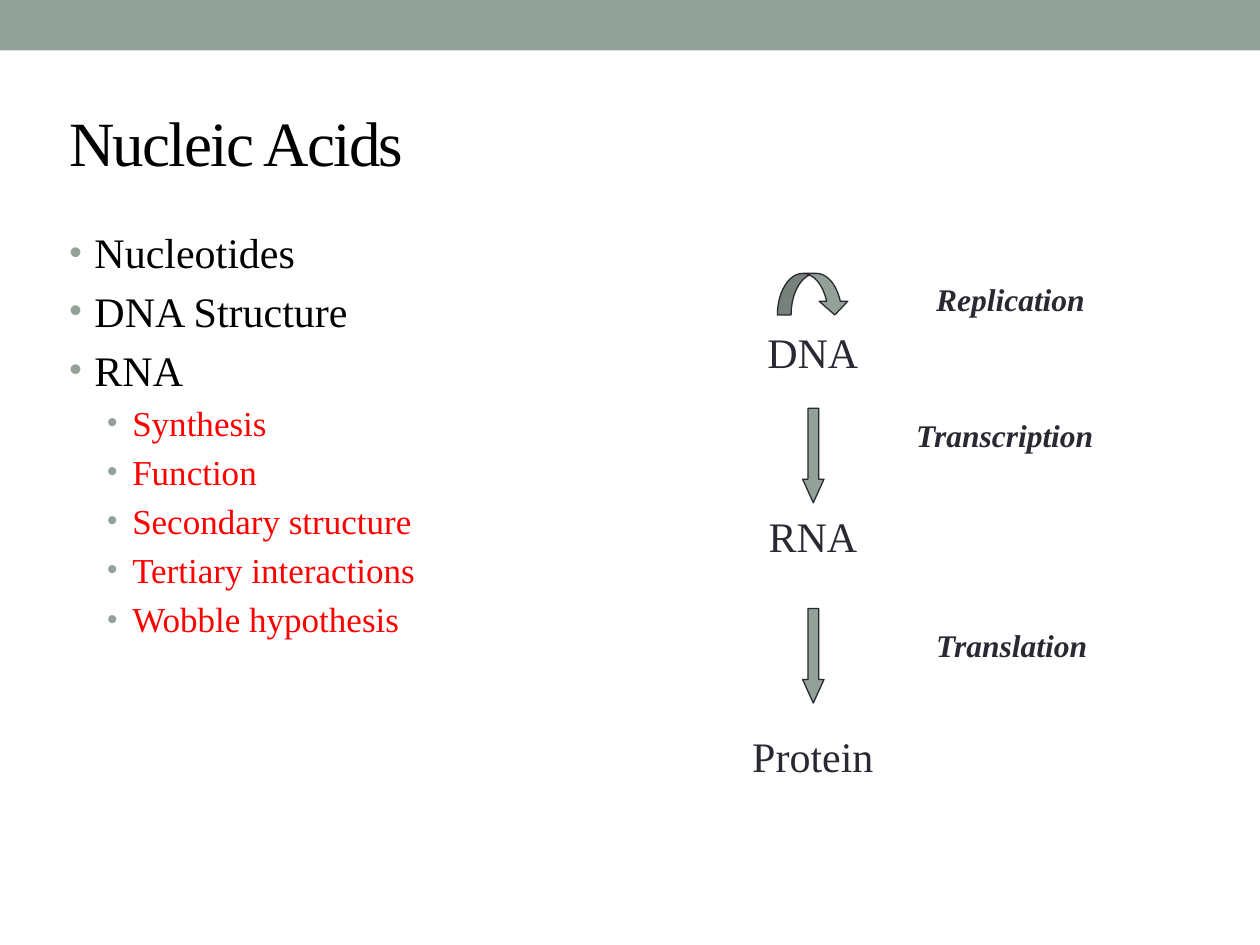
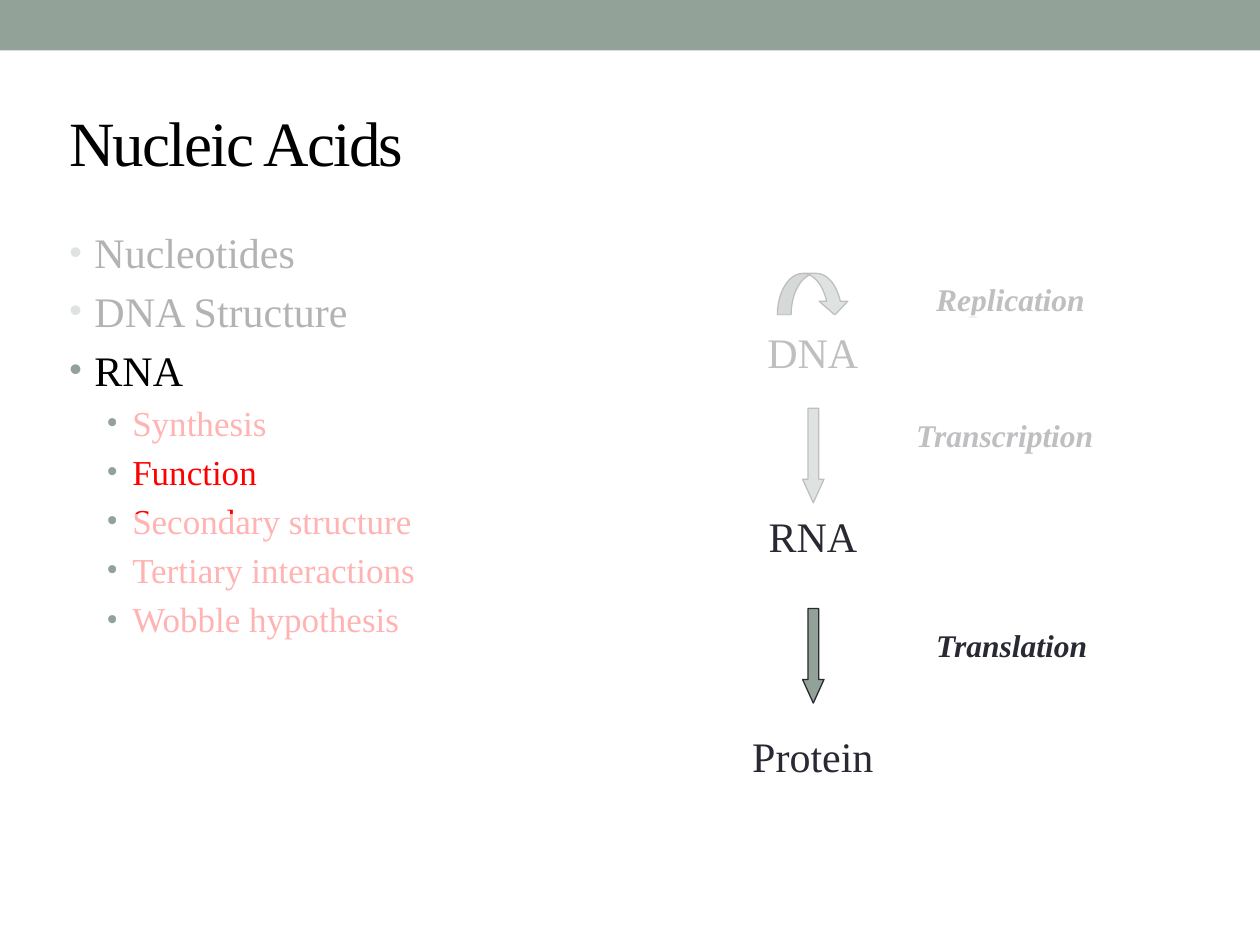
from lxml import etree
from pptx import Presentation
from pptx.dml.color import RGBColor
from pptx.enum.shapes import MSO_SHAPE
from pptx.enum.text import MSO_ANCHOR, MSO_AUTO_SIZE
from pptx.oxml.ns import qn
from pptx.util import Inches, Pt

RECTANGLE = MSO_SHAPE.RECTANGLE
DOWN_ARROW = MSO_SHAPE.DOWN_ARROW
CURVED_ARROW = MSO_SHAPE.CURVED_DOWN_ARROW
MIDDLE = MSO_ANCHOR.MIDDLE
TOP = MSO_ANCHOR.TOP
FIT_TEXT = MSO_AUTO_SIZE.SHAPE_TO_FIT_TEXT

FONT = "Times New Roman"
SAGE = "93A299"
INK = "292934"
BLACK = "000000"
RED = "FF0000"
WHITE = "FFFFFF"
INSET = 0.05

TOPICS = [
    ("Nucleotides", 0),
    ("DNA Structure", 0),
    ("RNA", 0),
    ("Synthesis", 1),
    ("Function", 1),
    ("Secondary structure", 1),
    ("Tertiary interactions", 1),
    ("Wobble hypothesis", 1),
]
LEVELS = [(0.2, 24, BLACK), (0.5, 20, RED)]
MOLECULES = [
    ("DNA", 6.04, 2.54, 0.84),
    ("RNA", 6.05, 4, 0.82),
    ("Protein", 5.92, 5.75, 1.08),
]
PROCESSES = [
    ("Replication", 7.38, 2.17, 1.29),
    ("Transcription", 7.22, 3.25, 1.52),
    ("Translation", 7.38, 4.92, 1.31),
]
VEILS = [
    (0.5, 1.42, 3.75, 1.33),
    (0.92, 4.08, 3.92, 2.33),
    (5.75, 1.92, 3.17, 0.67),
    (5.58, 2.5, 3.5, 1.58),
    (0.92, 3.08, 3.58, 0.58),
]


def color(hex_string):
    return RGBColor.from_string(hex_string)


def add_child(parent, tag, **attributes):
    return etree.SubElement(parent, qn(tag), attributes)


def style_font(paragraph, size, hex_string, emphasis=False):
    font = paragraph.font
    font.name = FONT
    font.size = Pt(size)
    font.color.rgb = color(hex_string)
    font.bold = font.italic = emphasis


def add_text_frame(slide, left, top, width, height, wrap=True, anchor=TOP):
    box = slide.shapes.add_textbox(*map(Inches, (left, top, width, height)))
    frame = box.text_frame
    frame.margin_left = frame.margin_right = Inches(INSET)
    frame.margin_top = frame.margin_bottom = Inches(INSET)
    frame.word_wrap = wrap
    frame.vertical_anchor = anchor
    return frame


def add_shape(slide, kind, place, fill, line=None, adjustments=(), opacity=None):
    shape = slide.shapes.add_shape(kind, *map(Inches, place))
    shape.shadow.inherit = False
    shape.fill.solid()
    shape.fill.fore_color.rgb = color(fill)
    if line:
        shape.line.color.rgb = color(line)
        shape.line.width = Pt(0.75)
    else:
        shape.line.fill.background()
    for index, value in enumerate(adjustments):
        shape.adjustments[index] = value
    if opacity is not None:
        fill_color = shape.fill._xPr.find(qn("a:solidFill"))[0]
        add_child(fill_color, "a:alpha", val=str(opacity * 1000))


def add_title(slide, text):
    frame = add_text_frame(slide, 0.5, 0.58, 9, 1.08, anchor=MIDDLE)
    paragraph = frame.paragraphs[0]
    run = paragraph.add_run()
    run.text = text
    style_font(paragraph, 36, BLACK)
    run._r.get_or_add_rPr().set("spc", "-100")


def add_bullet(paragraph, indent):
    properties = paragraph._p.get_or_add_pPr()
    properties.set("marL", str(Inches(indent)))
    properties.set("indent", str(Inches(-0.2)))
    bullet_color = add_child(properties, "a:buClr")
    add_child(bullet_color, "a:srgbClr", val=SAGE)
    add_child(properties, "a:buSzPct", val="85000")
    add_child(properties, "a:buFont", typeface="Arial")
    add_child(properties, "a:buChar", char="•")


def add_topics(slide):
    frame = add_text_frame(slide, 0.5, 1.75, 9, 5.33)
    for index, (text, level) in enumerate(TOPICS):
        paragraph = frame.add_paragraph() if index else frame.paragraphs[0]
        indent, size, hex_string = LEVELS[level]
        paragraph.text = text
        paragraph.level = level
        paragraph.space_before = Pt(size * 0.2)
        add_bullet(paragraph, indent)
        style_font(paragraph, size, hex_string)


def add_label(slide, text, left, top, width, height, size, emphasis=False):
    frame = add_text_frame(slide, left, top, width, height, wrap=False)
    frame.auto_size = FIT_TEXT
    paragraph = frame.paragraphs[0]
    paragraph.text = text
    style_font(paragraph, size, INK, emphasis)


def add_pathway(slide):
    for text, left, top, width in MOLECULES:
        add_label(slide, text, left, top, width, 0.46, 24)
    add_shape(slide, CURVED_ARROW, (6.17, 2.17, 0.57, 0.33), SAGE, INK,
              (0.33, 0.69, 0.33))
    for top in (3.24, 4.83):
        add_shape(slide, DOWN_ARROW, (6.37, top, 0.17, 0.75), SAGE, INK,
                  (0.5, 1.1))
    for text, left, top, width in PROCESSES:
        add_label(slide, text, left, top, width, 0.38, 18, emphasis=True)


def add_overview_slide(presentation, veils=()):
    slide = presentation.slides.add_slide(presentation.slide_layouts[6])
    add_shape(slide, RECTANGLE, (0, 0, 10, 0.4), SAGE)
    add_title(slide, "Nucleic Acids")
    add_topics(slide)
    add_pathway(slide)
    for place in veils:
        add_shape(slide, RECTANGLE, place, WHITE, opacity=70)


def main():
    presentation = Presentation()
    presentation.slide_width = Inches(10)
    presentation.slide_height = Inches(7.5)
    add_overview_slide(presentation)
    add_overview_slide(presentation, VEILS)
    presentation.save("out.pptx")


if __name__ == "__main__":
    main()
